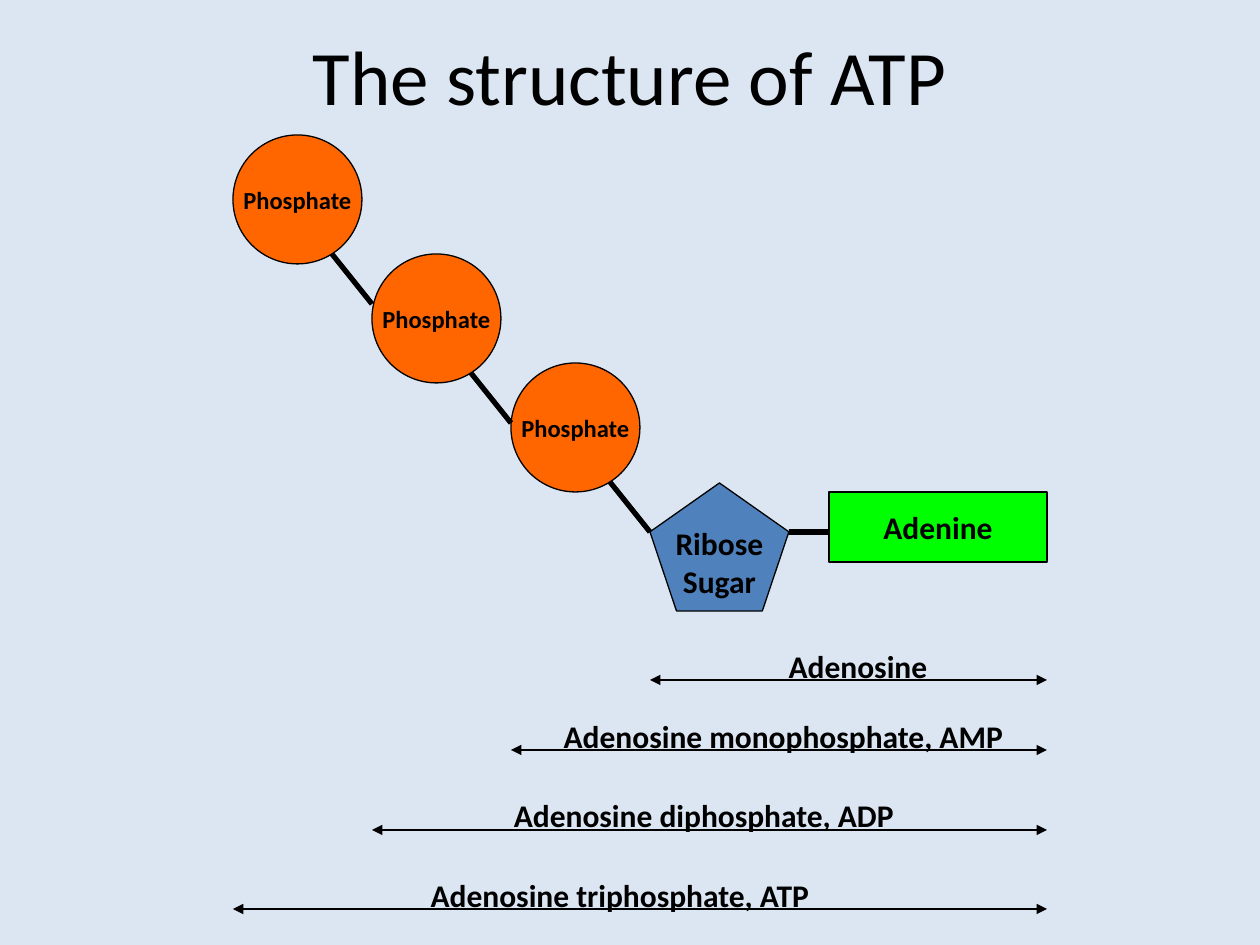
from lxml import etree
from pptx import Presentation, util as u
from pptx.dml.color import RGBColor
from pptx.enum import shapes, text
from pptx.oxml.ns import qn

PX = 914400 / 126
BLACK = "000000"


def rgb(value):
    return RGBColor.from_string(value)


def write(sp, lines, size, bold=True, anchor=text.MSO_ANCHOR.MIDDLE, wrap=False):
    tf = sp.text_frame
    tf.word_wrap = wrap
    tf.vertical_anchor = anchor
    for i, line in enumerate(lines):
        p = tf.add_paragraph() if i else tf.paragraphs[0]
        p.alignment = text.PP_ALIGN.CENTER
        r = p.add_run()
        r.text = line
        r.font.name = "Calibri"
        r.font.size = u.Pt(size)
        r.font.bold = bold
        r.font.color.rgb = rgb(BLACK)


prs = Presentation()
prs.slide_width, prs.slide_height = u.Inches(10), u.Inches(7.5)
s = prs.slides.add_slide(prs.slide_layouts[6])
s.background.fill.solid()
s.background.fill.fore_color.rgb = rgb("DCE6F2")

title = s.shapes.add_textbox(*[int(v * PX) for v in (63, 16, 1134, 117)])
write(title, ["The structure of ATP"], 44, bold=False, wrap=True)

phosphates = [(233, 135), (372, 254), (511, 363)]
kinds = shapes.MSO_SHAPE
parts = [
    (kinds.REGULAR_PENTAGON, 650, 483, 139, 128, "4F81BD", ["Ribose", "Sugar"], 18),
    (kinds.RECTANGLE, 829, 492, 218, 70, "00FF00", ["Adenine"], 18),
]
parts += [(kinds.OVAL, x, y, 129, 129, "FF6600", ["Phosphate"], 14) for x, y in phosphates]
for kind, x, y, w, h, fill, lines, size in parts:
    sp = s.shapes.add_shape(kind, *[int(v * PX) for v in (x, y, w, h)])
    sp.shadow.inherit = False
    sp.fill.solid()
    sp.fill.fore_color.rgb = rgb(fill)
    sp.line.color.rgb = rgb(BLACK)
    sp.line.width = u.Pt(0.75)
    write(sp, lines, size)

spans = [
    ("Adenosine", 650, 680, 709, 641, 298),
    ("Adenosine monophosphate, AMP", 511, 750, 511, 711, 545),
    ("Adenosine diphosphate, ADP", 372, 830, 471, 790, 466),
    ("Adenosine triphosphate, ATP", 233, 909, 372, 870, 496),
]
for label, start, line_y, x, y, w in spans:
    box = s.shapes.add_textbox(*[int(v * PX) for v in (x, y, w, 50)])
    write(box, [label], 18, anchor=text.MSO_ANCHOR.TOP, wrap=True)

links = [(x + 139, y + 169, x + 99, y + 119, 3, False) for x, y in phosphates]
links.append((789, 532, 829, 532, 3, False))
links += [(1047, line_y, start, line_y, 0.75, True) for _, start, line_y, *_ in spans]
for x1, y1, x2, y2, width, arrows in links:
    ends = [int(v * PX) for v in (x1, y1, x2, y2)]
    c = s.shapes.add_connector(shapes.MSO_CONNECTOR.STRAIGHT, *ends)
    c.line.color.rgb = rgb(BLACK)
    c.line.width = u.Pt(width)
    if arrows:
        for end in ("a:headEnd", "a:tailEnd"):
            etree.SubElement(c.line._get_or_add_ln(), qn(end), type="triangle")
    etree.SubElement(c._element.spPr, qn("a:effectLst"))

prs.save("out.pptx")
